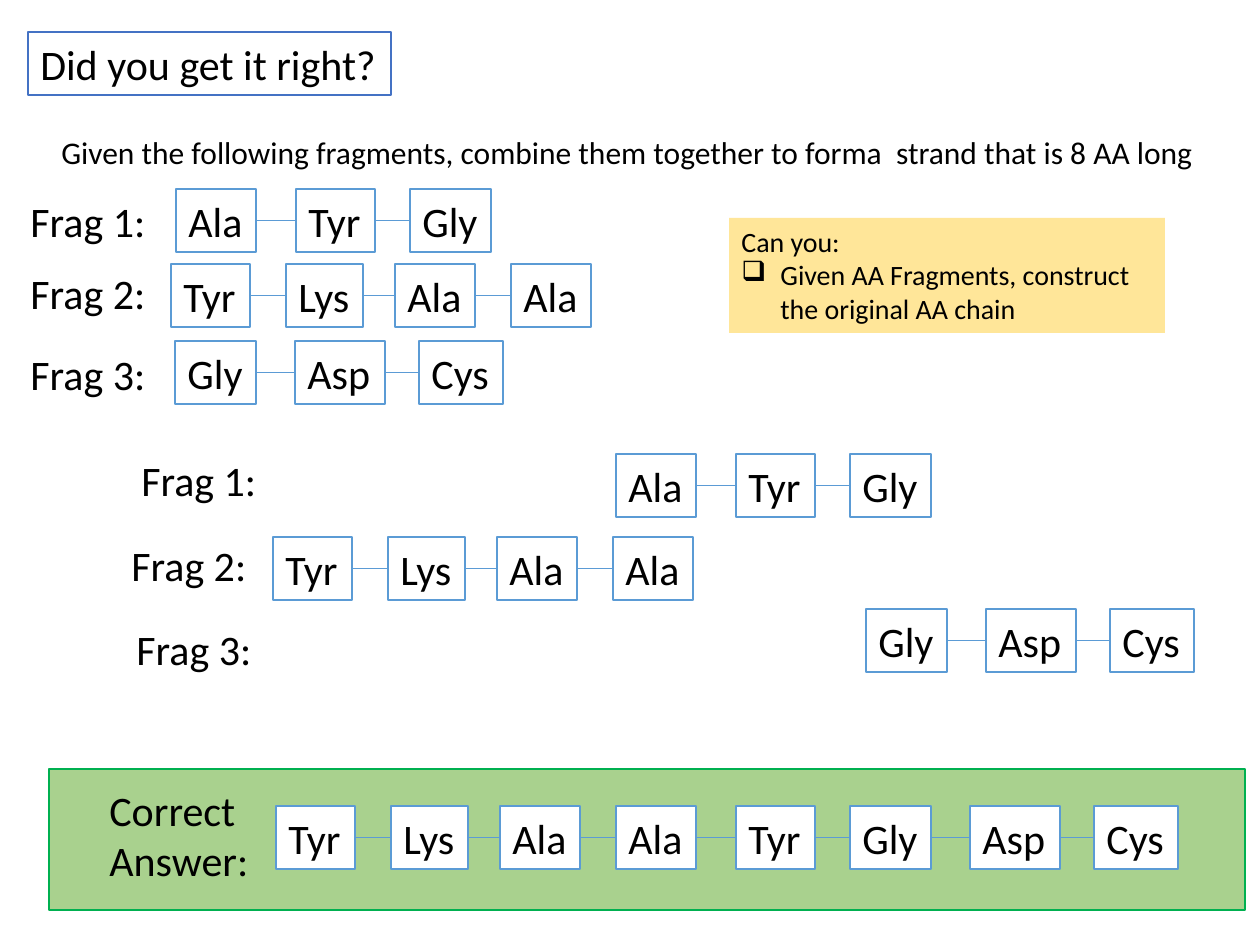
from lxml import etree
from pptx import Presentation, util as u
from pptx.dml.color import RGBColor
from pptx.enum import shapes, text
from pptx.oxml.ns import qn

SCALE = 914400 / 126
BLACK, WHITE = "000000", "FFFFFF"
BLUE, TITLE_BLUE = "5B9BD5", "4472C4"
GREEN, DARK_GREEN, YELLOW = "A9D18E", "00B050", "FFE699"

# Each residue of the full strand with its left edge, counted from the first
STRAND = [("Tyr", 0), ("Lys", 115), ("Ala", 224), ("Ala", 340),
          ("Tyr", 460), ("Gly", 574), ("Asp", 694), ("Cys", 818)]
RESIDUE_WIDTH = {"Tyr": 79, "Lys": 77, "Ala": 80, "Gly": 81, "Asp": 90, "Cys": 84}
RESIDUE_HEIGHT = 63
FRAGMENTS = [STRAND[3:6], STRAND[0:4], STRAND[5:8]]


def px(length):
    return u.Emu(round(length * SCALE))


def color(hex_string):
    return RGBColor.from_string(hex_string)


class Board:
    def __init__(self, slide, font="Calibri"):
        self.slide = slide
        self.font = font

    def set_words(self, shape, words, size, wrap=False):
        frame = shape.text_frame
        frame.text = words
        frame.word_wrap = wrap
        frame.auto_size = text.MSO_AUTO_SIZE.SHAPE_TO_FIT_TEXT
        frame.vertical_anchor = text.MSO_ANCHOR.TOP
        for paragraph in frame.paragraphs:
            paragraph.alignment = text.PP_ALIGN.LEFT
            for run in paragraph.runs:
                run.font.name = self.font
                run.font.size = u.Pt(size)
                run.font.color.rgb = color(BLACK)

    def box(self, left, top, width, height, fill, line=None, parent=None):
        owner = parent or self.slide
        shape = owner.shapes.add_shape(
            shapes.MSO_SHAPE.RECTANGLE, px(left), px(top), px(width), px(height))
        shape.shadow.inherit = False
        shape.fill.solid()
        shape.fill.fore_color.rgb = color(fill)
        if line:
            shape.line.color.rgb = color(line)
            shape.line.width = u.Pt(1)
        else:
            shape.line.fill.background()
        return shape

    def label(self, left, top, width, height, words, size=24):
        shape = self.slide.shapes.add_textbox(px(left), px(top), px(width), px(height))
        self.set_words(shape, words, size)

    def bond(self, group, start, end, y):
        line = group.shapes.add_connector(
            shapes.MSO_CONNECTOR.STRAIGHT, px(start), px(y), px(end), px(y))
        line.line.color.rgb = color(BLUE)
        line.line.width = u.Pt(0.5)
        etree.SubElement(line._element.spPr, qn("a:effectLst"))

    def chain(self, left, top, residues):
        """Draw a group of residue boxes joined by bonds."""
        group = self.slide.shapes.add_group_shape()
        first = residues[0][1]
        previous_end = None
        for name, offset in residues:
            x, width = left + offset - first, RESIDUE_WIDTH[name]
            residue = self.box(x, top, width, RESIDUE_HEIGHT, WHITE, BLUE, group)
            self.set_words(residue, name, 24)
            if previous_end is not None:
                self.bond(group, previous_end, x, top + RESIDUE_HEIGHT // 2)
            previous_end = x + width

    def bullet(self, paragraph, mark, indent):
        properties = paragraph._p.get_or_add_pPr()
        properties.set("marL", str(px(indent)))
        properties.set("indent", str(-px(indent)))
        etree.SubElement(properties, qn("a:buChar"), char=mark)


def main():
    deck = Presentation()
    deck.slide_width, deck.slide_height = px(1260), px(945)
    board = Board(deck.slides.add_slide(deck.slide_layouts[6]))

    board.box(49, 769, 1196, 141, GREEN, DARK_GREEN)
    title = board.box(28, 32, 363, 63, WHITE, TITLE_BLUE)
    board.set_words(title, "Did you get it right?", 24)
    board.label(49, 127, 1170, 51, "Given the following fragments, combine them "
                "together to forma  strand that is 8 AA long", 18)

    # (label left, label top, chain left, chain top) for fragments 1 to 3
    given = [(18, 189, 176, 189), (18, 261, 171, 264), (18, 342, 175, 341)]
    aligned = [(129, 448, 616, 454), (119, 533, 273, 537), (124, 617, 866, 609)]
    for places in (given, aligned):
        for number, (place, residues) in enumerate(zip(places, FRAGMENTS), 1):
            label_left, label_top, chain_left, chain_top = place
            board.label(label_left, label_top, 141, 63, f"Frag {number}:")
            board.chain(chain_left, chain_top, residues)

    board.label(97, 778, 166, 115, "Correct\nAnswer:")
    board.chain(276, 806, STRAND)

    goals = board.box(729, 218, 436, 115, YELLOW)
    board.set_words(goals, "Can you:\nGiven AA Fragments, construct the original AA chain",
                    16, wrap=True)
    board.bullet(goals.text_frame.paragraphs[1], "❑", 39)

    deck.save("out.pptx")


if __name__ == "__main__":
    main()
